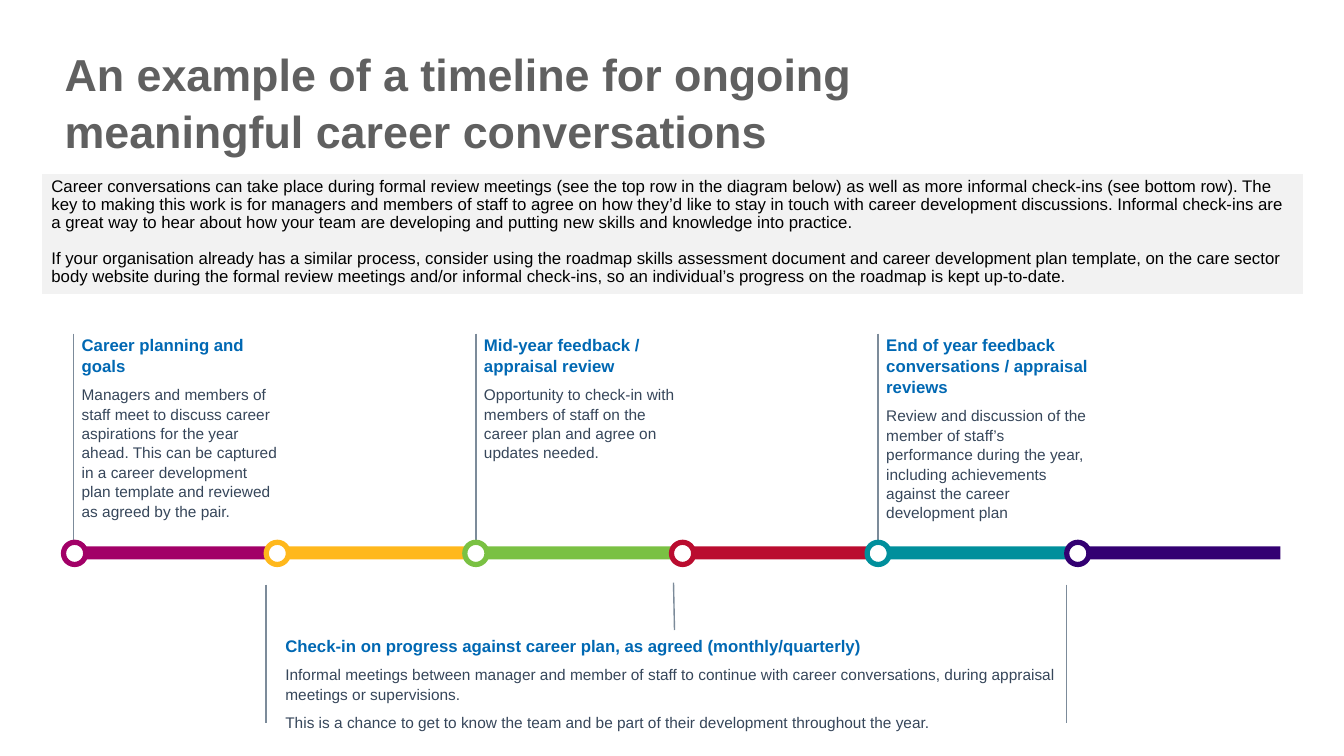
import pptx
import pptx.dml.color
import pptx.enum.shapes
import pptx.enum.text
import pptx.oxml
import pptx.oxml.ns
import pptx.util

Inches = pptx.util.Inches
Pt = pptx.util.Pt
Shape = pptx.enum.shapes.MSO_SHAPE
Align = pptx.enum.text.PP_ALIGN
Anchor = pptx.enum.text.MSO_ANCHOR
AutoSize = pptx.enum.text.MSO_AUTO_SIZE

COLORS = {
    "title": "606060", "intro": "000000", "panel": "F2F2F2",
    "heading": "0068B3", "body": "36465A", "rule": "7C8B9A", "white": "FFFFFF",
}
TITLE = "An example of a timeline for ongoing meaningful career conversations"
INTRO = [
    "Career conversations can take place during formal review meetings (see the top row in the "
    "diagram below) as well as more informal check-ins (see bottom row). The key to making this "
    "work is for managers and members of staff to agree on how they’d like to stay in touch with "
    "career development discussions. Informal check-ins are a great way to hear about how your "
    "team are developing and putting new skills and knowledge into practice.",
    "If your organisation already has a similar process, consider using the roadmap skills "
    "assessment document and career development plan template, on the care sector body website "
    "during the formal review meetings and/or informal check-ins, so an individual’s progress "
    "on the roadmap is kept up-to-date.",
]
# Bar colour and left edge of its marker
STAGES = [
    ("A20067", 0.63), ("FFB81C", 2.64), ("7AC143", 4.61),
    ("BA0C2F", 6.66), ("008F9C", 8.6), ("330072", 10.58),
]
# Stage index, width, height, heading, body
FORMAL_REVIEWS = [
    (0, 2.04, 1.78, "Career planning and goals",
     "Managers and members of staff meet to discuss career aspirations for the year ahead. "
     "This can be captured in a career development plan template and reviewed as agreed by "
     "the pair."),
    (2, 2.15, 1.23, "Mid-year feedback / appraisal review",
     "Opportunity to check-in with members of staff on the career plan and agree on updates "
     "needed."),
    (4, 2.15, 1.62, "End of year feedback conversations / appraisal reviews",
     "Review and discussion of the member of staff’s performance during the year, including "
     "achievements against the career development plan"),
]
CHECK_IN = [
    "Check-in on progress against career plan, as agreed (monthly/quarterly)",
    "Informal meetings between manager and member of staff to continue with career "
    "conversations, during appraisal meetings or supervisions.",
    "This is a chance to get to know the team and be part of their development throughout "
    "the year.",
]
CHECK_IN_RULES = [
    (2.64, 5.8, 2.64, 7.17), (6.68, 5.78, 6.69, 6.25), (10.58, 5.8, 10.58, 7.17),
]
TIMELINE_LEFT, TIMELINE_RIGHT = 0.73, 12.7
REVIEW_TOP, BAR_TOP, BAR_HEIGHT = 3.31, 5.42, 0.13
MARKER_TOP, MARKER_SIZE = 5.38, 0.22
STAGE_WIDTH = (TIMELINE_RIGHT - TIMELINE_LEFT) / len(STAGES)

FONTS = {
    "title": {"size": Pt(32), "bold": True},
    "intro": {"size": Pt(12), "bold": False},
    "heading": {"size": Pt(12), "bold": True},
    "body": {"size": Pt(11), "bold": False},
}


def rgb(hex_color):
    return pptx.dml.color.RGBColor.from_string(hex_color)


def apply_formats(target, formats):
    for attribute, value in formats.items():
        setattr(target, attribute, value)


def fill_paragraph(paragraph, text, role, **spacing):
    paragraph.text = text
    apply_formats(paragraph, {"alignment": Align.LEFT, **spacing})
    apply_formats(paragraph.font, {"name": "Arial", **FONTS[role]})
    paragraph.font.color.rgb = rgb(COLORS[role])


def write_paragraphs(frame, entries):
    """Write (text, role, spacing) entries, one paragraph each."""
    for index, (text, role, spacing) in enumerate(entries):
        paragraph = frame.add_paragraph() if index else frame.paragraphs[0]
        fill_paragraph(paragraph, text, role, **spacing)


def add_rule(slide, x1, y1, x2, y2):
    rule = slide.shapes.add_connector(
        pptx.enum.shapes.MSO_CONNECTOR.STRAIGHT,
        Inches(x1), Inches(y1), Inches(x2), Inches(y2))
    rule.line.color.rgb = rgb(COLORS["rule"])
    rule.line.width = Pt(1)
    effects = pptx.oxml.parse_xml(f"<a:effectLst {pptx.oxml.ns.nsdecls('a')}/>")
    rule._element.spPr.append(effects)


def add_solid(slide, preset, box, fill, outline=None):
    solid = slide.shapes.add_shape(preset, *map(Inches, box))
    solid.shadow.inherit = False
    solid.fill.solid()
    solid.fill.fore_color.rgb = rgb(fill)
    if outline:
        solid.line.color.rgb = rgb(outline)
        solid.line.width = Pt(3.75)
    else:
        solid.line.fill.background()


def add_note(slide, box, heading, *bodies):
    """Add a timeline text: a blue heading over grey paragraphs."""
    frame = slide.shapes.add_textbox(*map(Inches, box)).text_frame
    apply_formats(frame, {
        "word_wrap": True, "auto_size": AutoSize.SHAPE_TO_FIT_TEXT,
        "vertical_anchor": Anchor.TOP, "margin_left": Inches(0.08),
        "margin_top": 0, "margin_right": 0, "margin_bottom": 0,
    })
    spacing = {"line_spacing": 1.05, "space_after": Pt(6)}
    write_paragraphs(frame, [(heading, "heading", spacing)]
                     + [(body, "body", spacing) for body in bodies])


def add_title(slide):
    title = slide.shapes.title
    apply_formats(title, {"left": Inches(0.54), "top": Inches(0.39),
                          "width": Inches(9.74), "height": Inches(0.77)})
    apply_formats(title.text_frame, {
        "word_wrap": True, "auto_size": AutoSize.NONE, "vertical_anchor": Anchor.TOP})
    write_paragraphs(title.text_frame, [(TITLE, "title", {"line_spacing": 1.05})])


def add_intro(slide):
    table = slide.shapes.add_table(
        1, 1, Inches(0.41), Inches(1.72), Inches(12.52), Inches(1.2)).table
    apply_formats(table, {"first_row": False, "horz_banding": False})
    cell = table.cell(0, 0)
    cell.fill.solid()
    cell.fill.fore_color.rgb = rgb(COLORS["panel"])
    write_paragraphs(cell.text_frame, [
        (text, "intro", {"line_spacing": 0.96, "space_before": Pt(12.6 if index else 0)})
        for index, text in enumerate(INTRO)])


def add_timeline(slide):
    stage_lefts = [TIMELINE_LEFT + index * STAGE_WIDTH for index in range(len(STAGES))]
    for stage, *_ in FORMAL_REVIEWS:
        add_rule(slide, stage_lefts[stage], REVIEW_TOP, stage_lefts[stage], BAR_TOP)
    for left, (color, _) in zip(stage_lefts, STAGES):
        add_solid(slide, Shape.RECTANGLE, (left, BAR_TOP, STAGE_WIDTH, BAR_HEIGHT), color)
    for color, marker_left in STAGES:
        add_solid(slide, Shape.OVAL, (marker_left, MARKER_TOP, MARKER_SIZE, MARKER_SIZE),
                  COLORS["white"], color)
    for stage, width, height, heading, body in FORMAL_REVIEWS:
        add_note(slide, (stage_lefts[stage], REVIEW_TOP, width, height), heading, body)
    add_note(slide, (2.75, 6.3, 7.82, 0.93), *CHECK_IN)
    for ends in CHECK_IN_RULES:
        add_rule(slide, *ends)


def main():
    deck = pptx.Presentation()
    deck.slide_width, deck.slide_height = Inches(13.33), Inches(7.5)
    slide = deck.slides.add_slide(deck.slide_layouts[5])
    add_title(slide)
    add_intro(slide)
    add_timeline(slide)
    deck.save("out.pptx")


if __name__ == "__main__":
    main()
